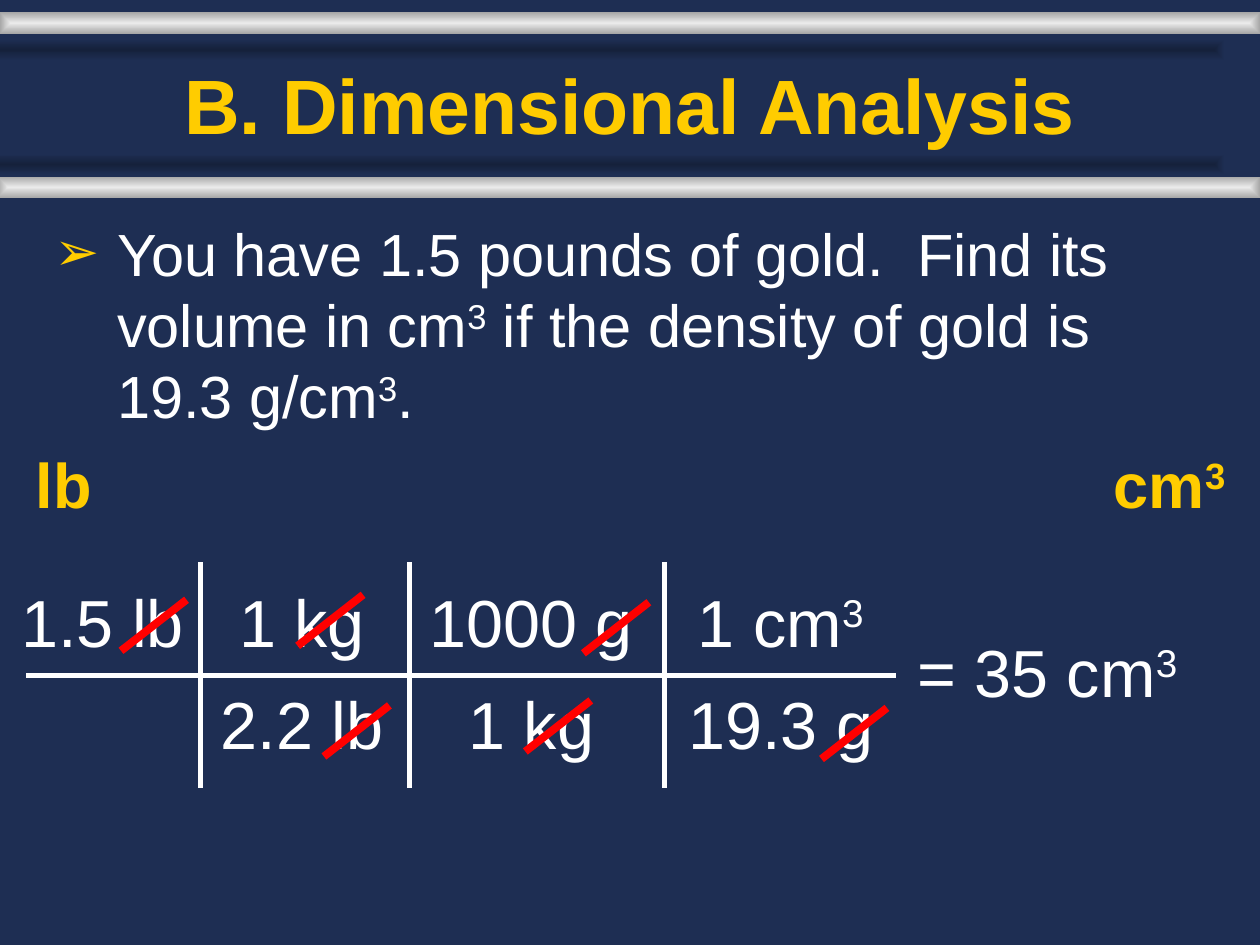
from lxml import etree
from pptx import Presentation
from pptx.dml.color import RGBColor
from pptx.enum.shapes import MSO_CONNECTOR, MSO_SHAPE
from pptx.enum.text import MSO_ANCHOR, MSO_AUTO_SIZE, PP_ALIGN
from pptx.oxml import parse_xml
from pptx.oxml.ns import nsdecls, qn
from pptx.util import Cm, Pt

LEFT, CENTER = PP_ALIGN.LEFT, PP_ALIGN.CENTER
TOP, BOTTOM = MSO_ANCHOR.TOP, MSO_ANCHOR.BOTTOM
STRAIGHT, RECTANGLE = MSO_CONNECTOR.STRAIGHT, MSO_SHAPE.RECTANGLE
FIXED = MSO_AUTO_SIZE.NONE

FONT = "Arial"
COLORS = {
    "navy": "1E2E53", "shade": "15213B", "silver": "EAEAEA", "steel": "A7A7A7",
    "gold": "FFCC00", "white": "FFFFFF", "red": "FF0000",
}

TITLE = "B. Dimensional Analysis"
QUESTION = ("You have 1.5 pounds of gold.  Find its volume in cm|3| "
            "if the density of gold is 19.3 g/cm|3|.")
UNITS = [("lb", 0.46, 1.65), ("cm|3|", 22.17, 2.82)]
START = "1.5 lb"
FACTORS = [
    (("1 kg", "2.2 lb"), 3.23, 4.04),
    (("1000 g", "1 kg"), 7.85, 8.26),
    (("1 cm|3|", "19.3 g"), 12.88, 13.39),
]
RESULT = "= 35 cm|3|"

BARS = [
    (0, 0.25, 25.4, "silver", "steel"),
    (-0.71, 0.79, 25.4, "shade", "navy"),
    (-0.05, 3.56, 25.45, "silver", "steel"),
    (-0.76, 3.1, 25.45, "shade", "navy"),
]
BAR_HEIGHT = 0.43
FACTOR_TOP, FACTOR_WIDTH, FACTOR_HEIGHT = 11.58, 5.72, 4.5
RULE_TOP, RULE_MIDDLE, RULE_BOTTOM = 11.33, 13.61, 15.88
STRIKES = [
    (3.76, 12.09), (7.85, 14.22), (7.32, 11.99),
    (11.91, 14.12), (13.08, 12.14), (17.88, 14.27),
]
STRIKE_WIDTH, STRIKE_HEIGHT = 1.32, 1.03


def color(name):
    return RGBColor.from_string(COLORS[name])


def write(frame, lines, size, ink="white", bold=False, align=LEFT,
          anchor=TOP, wrap=True, hanging=False, gap=0):
    frame.word_wrap = wrap
    frame.auto_size = FIXED
    frame.vertical_anchor = anchor
    for index, line in enumerate(lines):
        para = frame.add_paragraph() if index else frame.paragraphs[0]
        para.alignment = align
        if index:
            para.space_before = Pt(gap)
        if hanging:
            properties = para._p.get_or_add_pPr()
            properties.set("marL", str(Cm(1.27)))
            properties.set("indent", str(Cm(-1.27)))
        for position, text in enumerate(line.split("|")):
            if not text:
                continue
            run = para.add_run()
            run.text = text
            run.font.name = FONT
            run.font.size = Pt(size)
            run.font.bold = bold
            run.font.color.rgb = color(ink)
            if position % 2:
                run._r.get_or_add_rPr().set("baseline", "30000")


def place(shape, left, top, width, height):
    shape.left, shape.top = Cm(left), Cm(top)
    shape.width, shape.height = Cm(width), Cm(height)


def add_text(page, lines, left, top, width, height, **style):
    box = page.shapes.add_textbox(Cm(left), Cm(top), Cm(width), Cm(height))
    write(box.text_frame, lines, **style)


def add_line(page, start, end, ink, weight):
    line = page.shapes.add_connector(
        STRAIGHT, Cm(start[0]), Cm(start[1]), Cm(end[0]), Cm(end[1]))
    line.line.color.rgb = color(ink)
    line.line.width = Pt(weight)
    etree.SubElement(line._element.spPr, qn("a:effectLst"))


def add_bar(page, order, left, top, width, inner, outer):
    bar = page.shapes.add_shape(
        RECTANGLE, Cm(left), Cm(top), Cm(width), Cm(BAR_HEIGHT))
    bar.shadow.inherit = False
    bar.line.fill.background()
    gradient = parse_xml(
        f'<a:gradFill {nsdecls("a")} rotWithShape="1"><a:gsLst>'
        f'<a:gs pos="0"><a:srgbClr val="{COLORS[inner]}"/></a:gs>'
        f'<a:gs pos="100000"><a:srgbClr val="{COLORS[outer]}"/></a:gs>'
        '</a:gsLst><a:path path="shape">'
        '<a:fillToRect l="50000" t="50000" r="50000" b="50000"/>'
        '</a:path></a:gradFill>')
    bar._element.spPr.find(qn("a:prstGeom")).addnext(gradient)
    page.shapes._spTree.insert(2 + order, bar._element)


def add_bullet(para):
    properties = para._p.get_or_add_pPr()
    tint = etree.SubElement(properties, qn("a:buClr"))
    etree.SubElement(tint, qn("a:srgbClr"), val=COLORS["gold"])
    etree.SubElement(properties, qn("a:buSzPct"), val="90000")
    etree.SubElement(properties, qn("a:buFont"), typeface=FONT)
    etree.SubElement(properties, qn("a:buChar"), char="➢")


def main():
    deck = Presentation()
    deck.slide_width, deck.slide_height = Cm(25.4), Cm(19.05)
    page = deck.slides.add_slide(deck.slide_layouts[1])
    page.background.fill.solid()
    page.background.fill.fore_color.rgb = color("navy")

    for order, bar in enumerate(BARS):
        add_bar(page, order, *bar)

    title, body = page.shapes.title, page.placeholders[1]
    place(title, 1.91, 0.81, 21.59, 2.34)
    write(title.text_frame, [TITLE], 44, "gold", True, CENTER, BOTTOM)
    place(body, 0.84, 4.24, 23.7, 3.91)
    write(body.text_frame, [QUESTION], 34, hanging=True)
    add_bullet(body.text_frame.paragraphs[0])

    for unit, left, width in UNITS:
        add_text(page, [unit], left, 8.86, width, 1.78, size=36,
                 ink="gold", bold=True, align=CENTER, wrap=False)

    add_text(page, [START], 0.18, FACTOR_TOP, 6.05, 2.18, size=38, hanging=True)
    add_line(page, (0.53, RULE_MIDDLE), (18.06, RULE_MIDDLE), "white", 3)
    for fraction, left, rule in FACTORS:
        add_text(page, fraction, left, FACTOR_TOP, FACTOR_WIDTH, FACTOR_HEIGHT,
                 size=38, align=CENTER, hanging=True, gap=13)
        add_line(page, (rule, RULE_TOP), (rule, RULE_BOTTOM), "white", 3)
    add_text(page, [RESULT], 18.24, 12.6, 5.94, 2.01, size=38, hanging=True)

    for right, top in STRIKES:
        add_line(page, (right, top),
                 (right - STRIKE_WIDTH, top + STRIKE_HEIGHT), "red", 4.5)

    deck.save("out.pptx")


if __name__ == "__main__":
    main()
